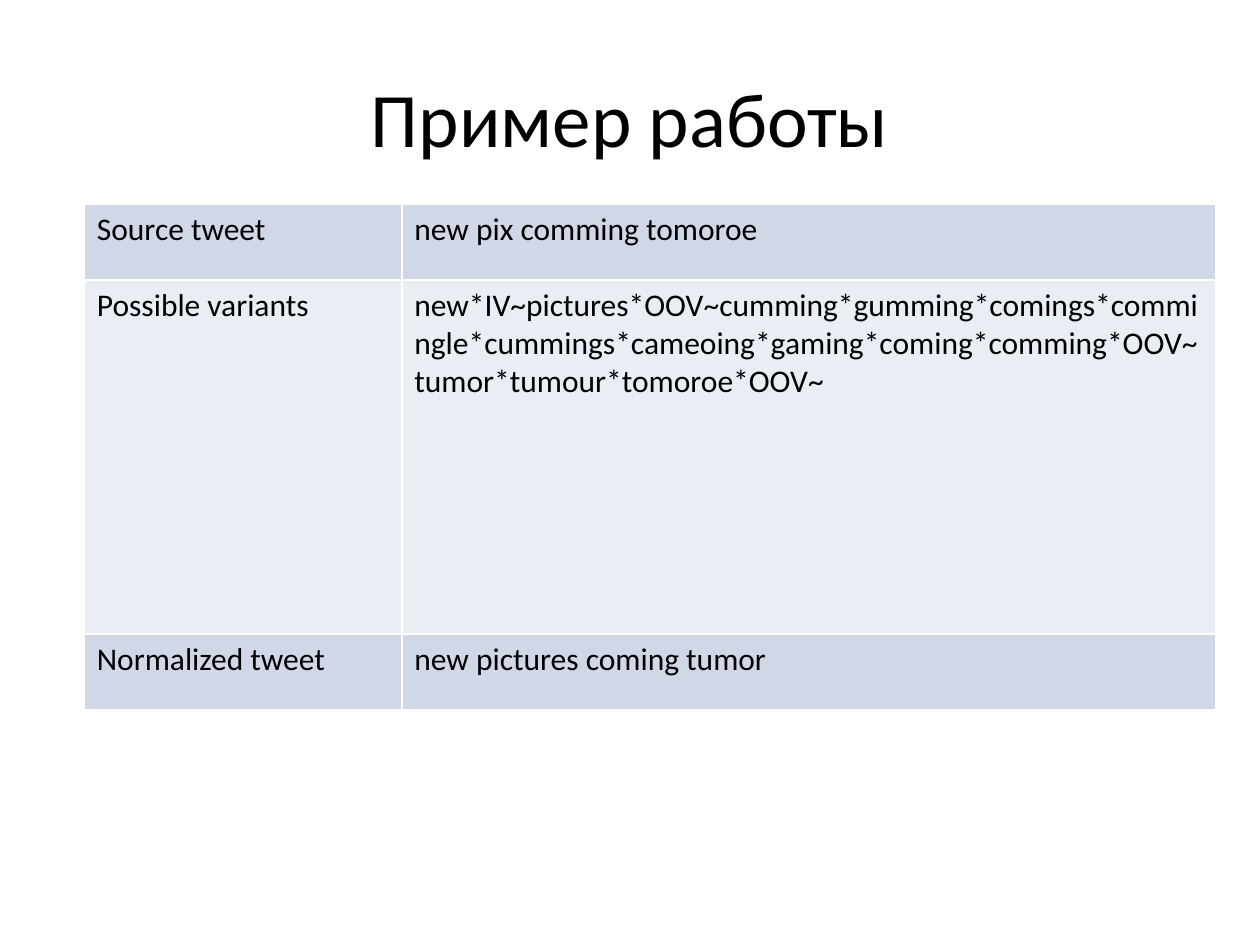
from lxml import etree
from pptx import Presentation
from pptx.dml.color import RGBColor
from pptx.enum import text
from pptx.oxml import ns
from pptx.util import Cm, Pt

COLORS = {"text": "000000", "band": "D0D8E8", "plain": "E9EDF4", "border": "FFFFFF"}
TITLE = "Пример работы"
TWEET_ROWS = [
    ("Source tweet", "new pix comming tomoroe"),
    ("Possible variants",
     "new*IV~pictures*OOV~cumming*gumming*comings*commingle*cummings*cameoing"
     "*gaming*coming*comming*OOV~tumor*tumour*tomoroe*OOV~"),
    ("Normalized tweet", "new pictures coming tumor"),
]
COLUMN_WIDTHS = [Cm(6.4), Cm(16.41)]
ROW_HEIGHTS = [Cm(1.52), Cm(7.14), Cm(1.52)]


def write(frame, words, size):
    frame.text = words
    font = frame.paragraphs[0].runs[0].font
    for name, value in {"name": "Calibri", "size": Pt(size)}.items():
        setattr(font, name, value)
    font.color.rgb = RGBColor.from_string(COLORS["text"])


def add_title(slide):
    title = slide.shapes.title
    box = {"left": Cm(1.27), "top": Cm(0.76), "width": Cm(22.86), "height": Cm(3.18)}
    for name, value in box.items():
        setattr(title, name, value)
    write(title.text_frame, TITLE, 44)
    title.text_frame.vertical_anchor = text.MSO_ANCHOR.MIDDLE
    title.text_frame.paragraphs[0].alignment = text.PP_ALIGN.CENTER


def add_borders(cell):
    properties = cell._tc.get_or_add_tcPr()
    for side in ("lnL", "lnR", "lnT", "lnB"):
        line = etree.SubElement(properties, ns.qn(f"a:{side}"), w=str(Pt(1)))
        fill = etree.SubElement(line, ns.qn("a:solidFill"))
        etree.SubElement(fill, ns.qn("a:srgbClr"), val=COLORS["border"])


def add_tweet_table(slide):
    table = slide.shapes.add_table(
        len(ROW_HEIGHTS), len(COLUMN_WIDTHS), Cm(1.7), Cm(4.12),
        sum(COLUMN_WIDTHS), sum(ROW_HEIGHTS)).table
    table.first_row = False
    for column, width in zip(table.columns, COLUMN_WIDTHS):
        column.width = width
    for index, (row, height, entries) in enumerate(
            zip(table.rows, ROW_HEIGHTS, TWEET_ROWS)):
        row.height = height
        for cell, words in zip(row.cells, entries):
            write(cell.text_frame, words, 18)
            add_borders(cell)
            cell.fill.solid()
            shade = COLORS["plain" if index % 2 else "band"]
            cell.fill.fore_color.rgb = RGBColor.from_string(shade)


def main():
    deck = Presentation()
    deck.slide_width, deck.slide_height = Cm(25.4), Cm(19.05)
    slide = deck.slides.add_slide(deck.slide_layouts[5])
    add_title(slide)
    add_tweet_table(slide)
    deck.save("out.pptx")


if __name__ == "__main__":
    main()
